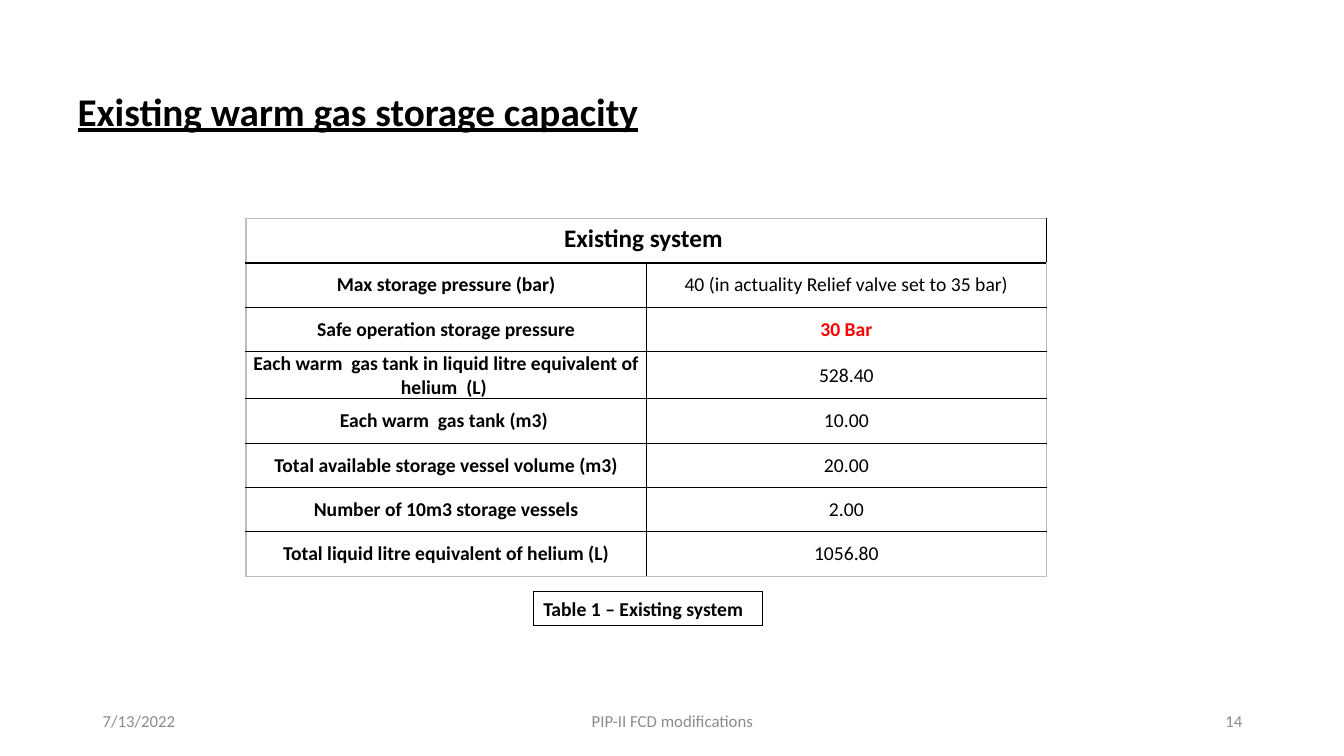
from dataclasses import dataclass

from lxml.etree import SubElement
from pptx import Presentation
from pptx.dml.color import RGBColor
from pptx.enum.shapes import MSO_SHAPE
from pptx.enum.text import MSO_ANCHOR as Anchor, MSO_AUTO_SIZE as AutoSize, PP_ALIGN as Align
from pptx.oxml.ns import qn
from pptx.util import Emu, Pt

PX = 9144  # EMU in one px, 100 px to the inch


@dataclass(frozen=True)
class Theme:
    font: str = "Calibri"
    ink: str = "000000"
    alert: str = "FF0000"
    muted: str = "8C8C8C"
    paper: str = "FFFFFF"
    frame: str = "BFBFBF"
    title_size: int = 28
    heading_size: int = 18
    body_size: int = 14
    footer_size: int = 12
    outline: float = 0.75
    grid: float = 1


def px(*lengths):
    return [Emu(length * PX) for length in lengths]


class SlideBuilder:
    def __init__(self, deck, theme):
        self.theme = theme
        self.page = deck.slides.add_slide(deck.slide_layouts[5])

    def add_text(self, frame, text, size, color, bold=False, underline=False, align=Align.LEFT):
        para = frame.paragraphs[0]
        para.alignment = align
        span = para.add_run()
        span.text = text
        font = span.font
        font.name, font.size = self.theme.font, Pt(size)
        font.bold, font.underline = bold, underline
        font.color.rgb = RGBColor.from_string(color)
        return para

    def title(self, text, bounds):
        box = self.page.shapes.title
        box.left, box.top, box.width, box.height = px(*bounds)
        frame = box.text_frame
        frame.auto_size = AutoSize.NONE
        frame.vertical_anchor = Anchor.MIDDLE
        para = self.add_text(frame, text, self.theme.title_size, self.theme.ink,
                             bold=True, underline=True)
        para.line_spacing = 0.9

    def caption(self, text, bounds):
        box = self.page.shapes.add_shape(MSO_SHAPE.RECTANGLE, *px(*bounds))
        box.shadow.inherit = False
        box.fill.background()
        box.line.color.rgb = RGBColor.from_string(self.theme.ink)
        box.line.width = Pt(self.theme.outline)
        box.text_frame.vertical_anchor = Anchor.TOP
        box.text_frame.auto_size = AutoSize.SHAPE_TO_FIT_TEXT
        self.add_text(box.text_frame, text, self.theme.body_size, self.theme.ink, bold=True)

    def footer(self, text, bounds, align):
        frame = self.page.shapes.add_textbox(*px(*bounds)).text_frame
        frame.word_wrap = True
        frame.vertical_anchor = Anchor.MIDDLE
        self.add_text(frame, text, self.theme.footer_size, self.theme.muted, align=align)

    def border(self, cell, edges):
        """Draw the cell's sides; edges maps each side to a colour."""
        properties = cell._tc.get_or_add_tcPr()
        for side, color in edges.items():
            line = SubElement(properties, qn(f"a:ln{side}"), w=str(Pt(self.theme.grid)))
            fill = SubElement(line, qn("a:solidFill"))
            SubElement(fill, qn("a:srgbClr"), val=color)

    def table(self, heading, rows, bounds, row_height):
        theme = self.theme
        count = len(rows) + 1
        table = self.page.shapes.add_table(count, 2, *px(*bounds)).table
        table.first_row = table.horz_banding = False
        for index, row in enumerate(table.rows):
            row.height = Emu(row_height * PX)
            for column, cell in enumerate(row.cells):
                outer = {"L": column == 0, "R": column == 1,
                         "T": index == 0, "B": index == count - 1}
                self.border(cell, {side: theme.frame if is_outer else theme.ink
                                   for side, is_outer in outer.items()})
                cell.fill.solid()
                cell.fill.fore_color.rgb = RGBColor.from_string(theme.paper)
        header = table.cell(0, 0)
        header.merge(table.cell(0, 1))
        self.add_text(header.text_frame, heading, theme.heading_size, theme.ink,
                      bold=True, align=Align.CENTER)
        for index, (label, value, anchor, highlighted) in enumerate(rows, 1):
            color = theme.alert if highlighted else theme.ink
            self.body_cell(table.cell(index, 0), label, anchor, theme.ink, True)
            self.body_cell(table.cell(index, 1), value, Anchor.MIDDLE, color, highlighted)

    def body_cell(self, cell, text, anchor, color, bold):
        cell.margin_left = cell.margin_right = cell.margin_top = cell.margin_bottom = 0
        cell.vertical_anchor = anchor
        self.add_text(cell.text_frame, text, self.theme.body_size, color,
                      bold=bold, align=Align.CENTER)


STORAGE_ROWS = [
    ("Max storage pressure (bar)", "40 (in actuality Relief valve set to 35 bar)",
     Anchor.MIDDLE, False),
    ("Safe operation storage pressure", "30 Bar", Anchor.MIDDLE, True),
    ("Each warm  gas tank in liquid litre equivalent of helium  (L) ", "528.40",
     Anchor.BOTTOM, False),
    ("Each warm  gas tank (m3) ", "10.00", Anchor.MIDDLE, False),
    ("Total available storage vessel volume (m3)", "20.00", Anchor.MIDDLE, False),
    ("Number of 10m3 storage vessels", "2.00", Anchor.MIDDLE, False),
    ("Total liquid litre equivalent of helium (L)", "1056.80", Anchor.MIDDLE, False),
]

FOOTERS = [
    ("7/13/2022", 92, 300, Align.LEFT),
    ("PIP-II FCD modifications", 442, 450, Align.CENTER),
    ("14", 942, 300, Align.RIGHT),
]


def main():
    deck = Presentation()
    deck.slide_width, deck.slide_height = px(1333, 750)
    slide = SlideBuilder(deck, Theme())
    slide.title("Existing warm gas storage capacity", (67, 40, 1150, 145))
    slide.caption("Table 1 – Existing system", (529, 587, 227, 34))
    slide.table("Existing system ", STORAGE_ROWS, (244, 217, 794, 352), row_height=44)
    for text, left, width, align in FOOTERS:
        slide.footer(text, (left, 695, width, 40), align)
    deck.save("out.pptx")


if __name__ == "__main__":
    main()
